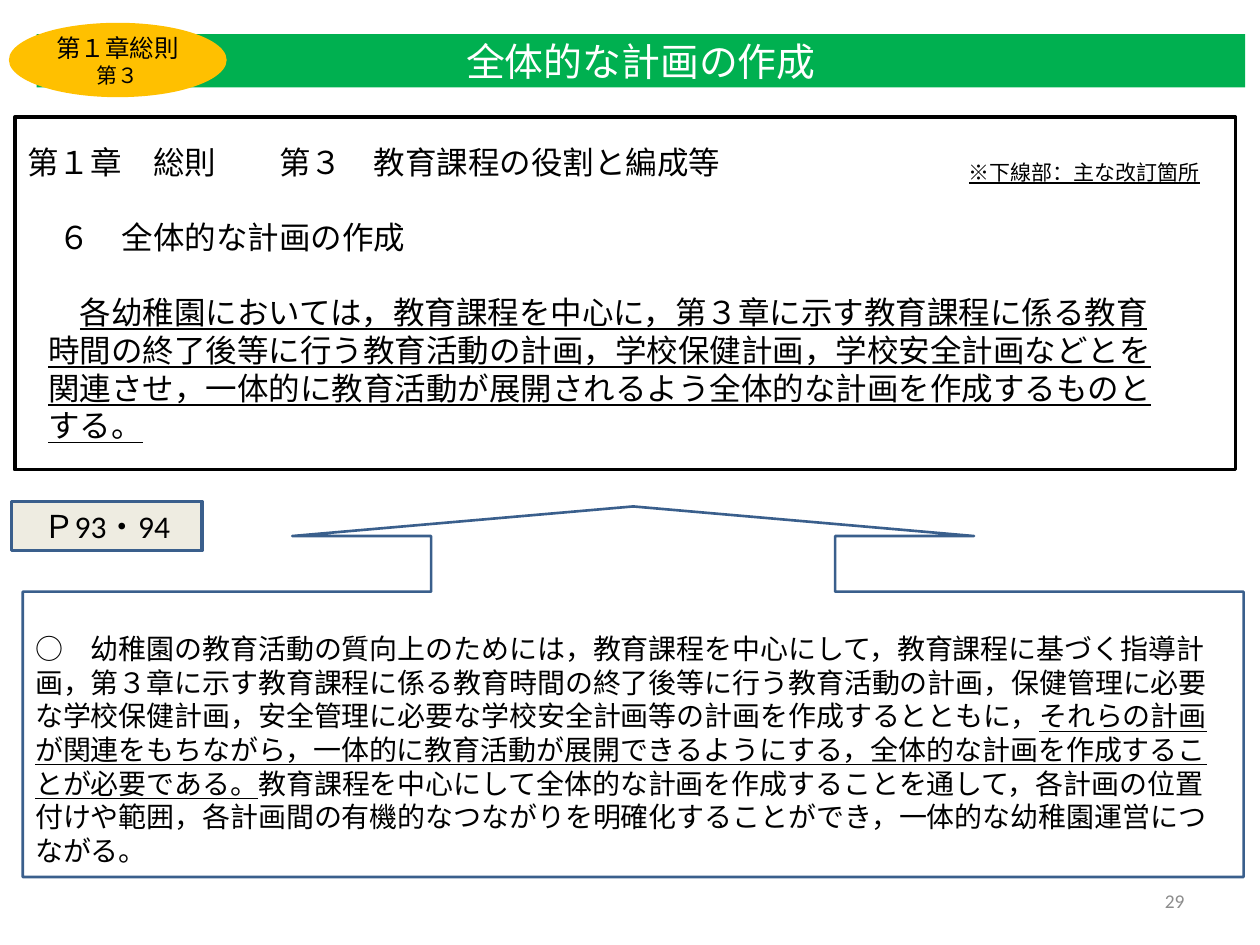
from lxml.etree import SubElement
from pptx import Presentation
from pptx.dml.color import RGBColor
from pptx.enum.shapes import MSO_SHAPE as Shape
from pptx.enum.text import MSO_ANCHOR as Anchor, MSO_AUTO_SIZE as AutoSize, PP_ALIGN as Align
from pptx.oxml.ns import qn
from pptx.util import Cm, Pt

BLACK = RGBColor(0, 0, 0)
WHITE = RGBColor(0xFF, 0xFF, 0xFF)
GREEN = RGBColor(0x00, 0xB0, 0x50)
AMBER = RGBColor(0xFF, 0xC0, 0x00)
BEIGE = RGBColor(0xEE, 0xEC, 0xE1)
BLUE = RGBColor(0x3A, 0x5F, 0x8C)
GREY = RGBColor(0x8C, 0x8C, 0x8C)
GOTHIC = "Noto Sans CJK JP"
LATIN = "Calibri"

CLAUSE = [
    "各幼稚園においては，教育課程を中心に，第３章に示す教育課程に係る教育",
    "時間の終了後等に行う教育活動の計画，学校保健計画，学校安全計画などとを",
    "関連させ，一体的に教育活動が展開されるよう全体的な計画を作成するものと",
    "する。",
]
EXPLANATION = [
    "○　幼稚園の教育活動の質向上のためには，教育課程を中心にして，教育課程に基づく指導計",
    "画，第３章に示す教育課程に係る教育時間の終了後等に行う教育活動の計画，保健管理に必要な"
    "学校保健計画，安全管理に必要な学校安全計画等の計画を作成するとともに，",
]
KEY_POINT = "それらの計画が関連をもちながら，一体的に教育活動が展開できるようにする，全体的な計画を作成することが必要である。"
RESULT = (
    "教育課程を中心にして全体的な計画を作成することを通して，各計画の位置付けや範囲，"
    "各計画間の有機的なつながりを明確化することができ，一体的な幼稚園運営につながる。"
)


def write(para, text, size=18, font=GOTHIC, color=BLACK, underline=False):
    span = para.add_run()
    span.text = text
    span.font.size = Pt(size)
    span.font.name = font
    span.font.color.rgb = color
    span.font.underline = underline
    SubElement(span.font._element, qn("a:ea"), typeface=font)


def write_lines(para, lines, **style):
    for number, line in enumerate(lines):
        if number:
            para.add_line_break()
        write(para, line, **style)


def set_paragraph(para, align=Align.LEFT, before=0, margin=0, indent=0):
    para.alignment = align
    para.space_before = Pt(before)
    para._p.get_or_add_pPr().set("marL", str(Cm(margin)))
    para._p.get_or_add_pPr().set("indent", str(Cm(indent)))
    return para


def set_frame(box, anchor=Anchor.MIDDLE):
    frame = box.text_frame
    frame.word_wrap = True
    frame.auto_size = AutoSize.NONE
    frame.vertical_anchor = anchor
    return frame


def add_box(page, kind, left, top, width, height, fill=None, line=None, weight=2):
    box = page.shapes.add_shape(kind, Cm(left), Cm(top), Cm(width), Cm(height))
    box.shadow.inherit = False
    if fill is None:
        box.fill.background()
    else:
        box.fill.solid()
        box.fill.fore_color.rgb = fill
    if line is None:
        box.line.fill.background()
    else:
        box.line.color.rgb = line
        box.line.width = Pt(weight)
    return box


def add_label(page, text, left, top, width, height, align=Align.LEFT, anchor=Anchor.TOP, **style):
    box = page.shapes.add_textbox(Cm(left), Cm(top), Cm(width), Cm(height))
    para = set_paragraph(set_frame(box, anchor).paragraphs[0], align)
    write(para, text, font=LATIN, **style)


def add_title(page, text):
    title = page.shapes.title
    title.left, title.top, title.width, title.height = Cm(0.74), Cm(0.69), Cm(24.36), Cm(1.07)
    title.fill.solid()
    title.fill.fore_color.rgb = GREEN
    frame = set_frame(title)
    frame.margin_top = frame.margin_bottom = Cm(0.1)
    write(set_paragraph(frame.paragraphs[0], Align.CENTER), text, size=22.2, color=WHITE)


def add_clause(page):
    frame = set_frame(add_box(page, Shape.RECTANGLE, 0.3, 2.36, 24.61, 7.11, line=BLACK))
    heading = set_paragraph(frame.paragraphs[0])
    write(heading, "第１章　総則　　第３　教育課程の役割と編成等")
    section = set_paragraph(frame.add_paragraph(), before=21.4)
    write(section, "　６　全体的な計画の作成")
    clause = set_paragraph(frame.add_paragraph(), before=21.4, margin=0.42, indent=0.64)
    write_lines(clause, CLAUSE, underline=True)


def add_explanation(page):
    callout = add_box(page, Shape.UP_ARROW_CALLOUT, 0.46, 10.21, 24.61, 7.47, line=BLUE, weight=1.5)
    for number, value in enumerate([1.09, 0.92, 0.08, 0.77]):
        callout.adjustments[number] = value
    frame = set_frame(callout, Anchor.TOP)
    frame.margin_top = Cm(0.81)
    para = set_paragraph(frame.paragraphs[0])
    write_lines(para, EXPLANATION, size=16)
    write(para, KEY_POINT, size=16, underline=True)
    write(para, RESULT, size=16)


def add_chapter_badge(page):
    frame = set_frame(add_box(page, Shape.OVAL, 0.18, 0.46, 4.39, 1.5, fill=AMBER))
    chapter = set_paragraph(frame.paragraphs[0], Align.CENTER)
    write(chapter, "第１章総則", size=14, font=LATIN)
    section = set_paragraph(frame.add_paragraph(), Align.CENTER)
    write(section, "第３", size=12, font=LATIN)


def add_page_reference(page):
    box = add_box(page, Shape.RECTANGLE, 0.23, 10.11, 3.84, 0.99, fill=BEIGE, line=BLUE)
    para = set_paragraph(set_frame(box).paragraphs[0], Align.CENTER)
    write(para, "Ｐ93・94", font=LATIN)


def main():
    deck = Presentation()
    deck.slide_width, deck.slide_height = Cm(25.4), Cm(19.05)
    page = deck.slides.add_slide(deck.slide_layouts[5])
    add_title(page, "全体的な計画の作成")
    add_clause(page)
    add_label(page, "※下線部：主な改訂箇所", 19.28, 3.1, 5.84, 0.76, size=12, underline=True)
    add_label(page, "29", 18.21, 17.65, 5.92, 1.02, Align.RIGHT, Anchor.MIDDLE, size=11.1, color=GREY)
    add_chapter_badge(page)
    add_explanation(page)
    add_page_reference(page)
    deck.save("out.pptx")


if __name__ == "__main__":
    main()
